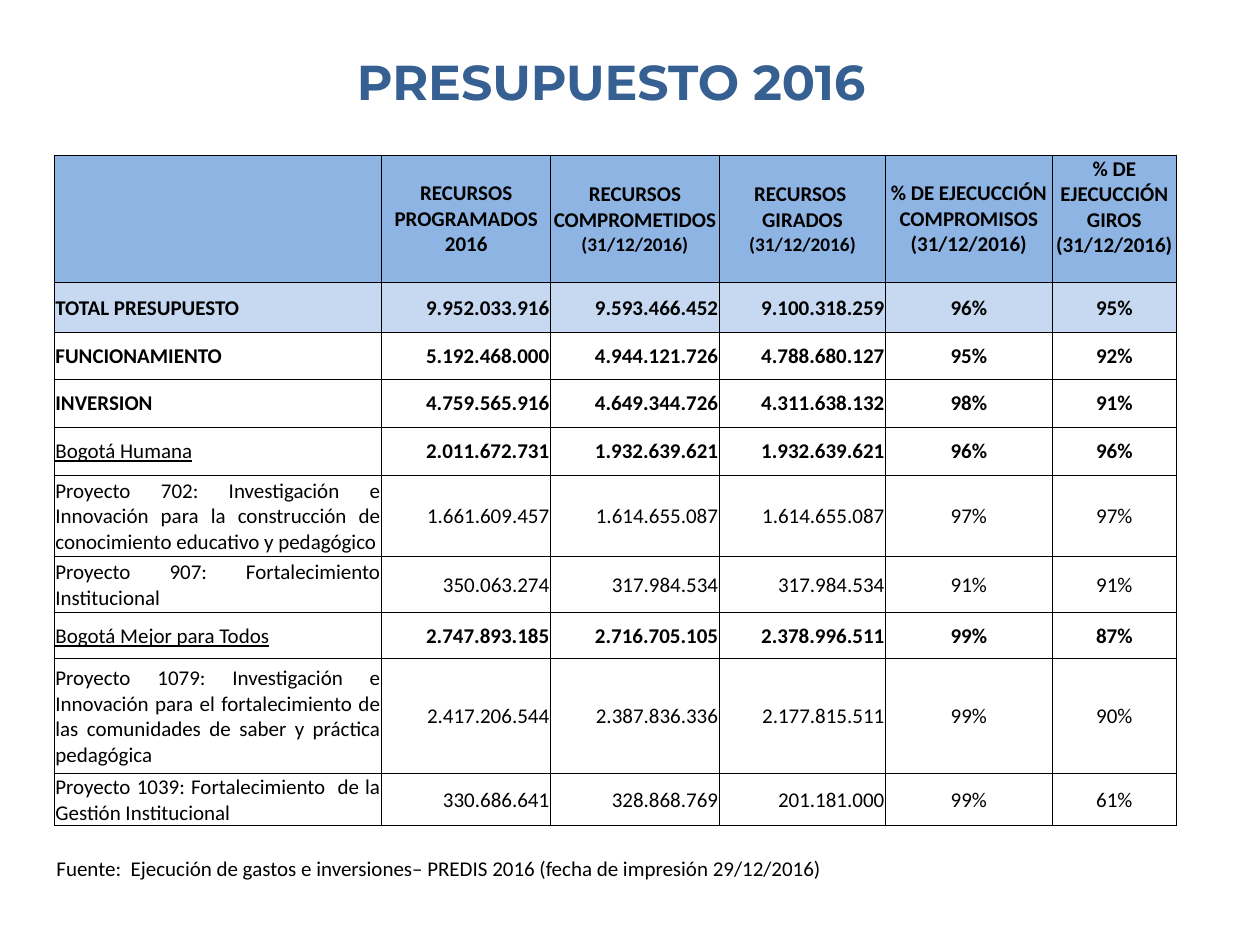
from pptx import Presentation
from pptx.dml.color import RGBColor
from pptx.enum.text import MSO_ANCHOR, MSO_AUTO_SIZE, PP_ALIGN
from pptx.oxml import parse_xml
from pptx.oxml.ns import nsdecls
from pptx.util import Inches, Pt

COLORS = {"title": "376092", "text": "000000", "border": "000000",
          "header": "8EB4E3", "total": "C6D9F1"}

COLUMN_WIDTHS = [2.6, 1.34, 1.34, 1.32, 1.32, 0.99]
ROW_HEIGHTS = [1.01, 0.4, 0.37, 0.38, 0.38, 0.65, 0.44, 0.37, 0.91, 0.41]
DATE = "(31/12/2016)"

HEADERS = [
    [],
    [("RECURSOS PROGRAMADOS", 12), ("2016", 12)],
    [("RECURSOS COMPROMETIDOS", 12), (DATE, 11)],
    [("RECURSOS ", 12), ("GIRADOS", 12), (DATE, 11)],
    [("% DE EJECUCCIÓN COMPROMISOS", 12), (DATE, 12)],
    [("% DE EJECUCCIÓN GIROS", 12), (DATE, 12)],
]

ROWS = [
    ("total", "TOTAL PRESUPUESTO", "9.952.033.916", "9.593.466.452", "9.100.318.259", "96%", "95%"),
    ("group", "FUNCIONAMIENTO", "5.192.468.000", "4.944.121.726", "4.788.680.127", "95%", "92%"),
    ("group", "INVERSION", "4.759.565.916", "4.649.344.726", "4.311.638.132", "98%", "91%"),
    ("plan", "Bogotá Humana", "2.011.672.731", "1.932.639.621", "1.932.639.621", "96%", "96%"),
    ("project", "Proyecto 702: Investigación e Innovación para la construcción de "
     "conocimiento educativo y pedagógico",
     "1.661.609.457", "1.614.655.087", "1.614.655.087", "97%", "97%"),
    ("project", "Proyecto 907: Fortalecimiento Institucional",
     "350.063.274", "317.984.534", "317.984.534", "91%", "91%"),
    ("plan", "Bogotá Mejor para Todos", "2.747.893.185", "2.716.705.105", "2.378.996.511", "99%", "87%"),
    ("project", "Proyecto 1079: Investigación e Innovación para el fortalecimiento de las "
     "comunidades de saber y práctica pedagógica",
     "2.417.206.544", "2.387.836.336", "2.177.815.511", "99%", "90%"),
    ("project", "Proyecto 1039: Fortalecimiento  de la Gestión Institucional",
     "330.686.641", "328.868.769", "201.181.000", "99%", "61%"),
]


class BudgetSlide:
    def __init__(self, page):
        self.page = page
        self.font = {"name": "Calibri", "size": Pt(12), "bold": False}
        self.margins = {"margin_left": Inches(0.01), "margin_right": Inches(0.01),
                        "margin_top": Inches(0.01), "margin_bottom": 0,
                        "vertical_anchor": MSO_ANCHOR.MIDDLE}

    def apply(self, target, values):
        for name, value in values.items():
            setattr(target, name, value)

    def add_span(self, para, text, align, color="text", **changes):
        para.alignment = align
        span = para.add_run()
        span.text = text
        self.apply(span.font, {**self.font, **changes})
        span.font.color.rgb = RGBColor.from_string(COLORS[color])

    def text(self, left, top, width, height, text, align, **changes):
        box = self.page.shapes.add_textbox(
            Inches(left), Inches(top), Inches(width), Inches(height))
        self.apply(box.text_frame, {"word_wrap": True,
                                    "auto_size": MSO_AUTO_SIZE.SHAPE_TO_FIT_TEXT})
        self.add_span(box.text_frame.paragraphs[0], text, align, **changes)

    def table(self, left, top, widths, heights):
        frame = self.page.shapes.add_table(
            len(heights), len(widths), Inches(left), Inches(top),
            Inches(sum(widths)), Inches(sum(heights)))
        grid = frame.table
        self.apply(grid, {"first_row": False, "horz_banding": False})
        for column, width in zip(grid.columns, widths):
            column.width = Inches(width)
        for row, height in zip(grid.rows, heights):
            row.height = Inches(height)
        return grid

    def cell(self, cell, lines, align, fill=None, **changes):
        self.apply(cell, self.margins)
        properties = cell._tc.get_or_add_tcPr()
        for side in ("lnL", "lnR", "lnT", "lnB"):
            properties.append(parse_xml(
                f'<a:{side} {nsdecls("a")} w="{Pt(0.5)}"><a:solidFill>'
                f'<a:srgbClr val="{COLORS["border"]}"/></a:solidFill></a:{side}>'))
        if fill:
            cell.fill.solid()
            cell.fill.fore_color.rgb = RGBColor.from_string(COLORS[fill])
        else:
            cell.fill.background()
        for index, (text, size) in enumerate(lines):
            frame = cell.text_frame
            para = frame.add_paragraph() if index else frame.paragraphs[0]
            self.add_span(para, text, align, size=Pt(size), **changes)


def main():
    deck = Presentation()
    deck.slide_width, deck.slide_height = Inches(10), Inches(7.5)
    slide = BudgetSlide(deck.slides.add_slide(deck.slide_layouts[6]))

    slide.text(2.4, 0.36, 4.9, 0.57, "PRESUPUESTO 2016", PP_ALIGN.CENTER,
               color="title", name="Montserrat", size=Pt(28), bold=True)
    slide.text(0.35, 6.74, 6.46, 0.3,
               "Fuente:  Ejecución de gastos e inversiones– PREDIS 2016 "
               "(fecha de impresión 29/12/2016)", PP_ALIGN.LEFT)

    grid = slide.table(0.43, 1.23, COLUMN_WIDTHS, ROW_HEIGHTS)
    for column, lines in enumerate(HEADERS):
        slide.cell(grid.cell(0, column), lines, PP_ALIGN.CENTER, "header", bold=True)
    grid.cell(0, len(HEADERS) - 1).margin_bottom = Inches(0.19)

    value_aligns = [PP_ALIGN.RIGHT] * 3 + [PP_ALIGN.CENTER] * 2
    for row, (kind, label, *values) in enumerate(ROWS, 1):
        fill = "total" if kind == "total" else None
        label_align = PP_ALIGN.JUSTIFY if kind == "project" else PP_ALIGN.LEFT
        slide.cell(grid.cell(row, 0), [(label, 12)], label_align, fill,
                   bold=kind in ("total", "group"), underline=kind == "plan")
        for column, (value, align) in enumerate(zip(values, value_aligns), 1):
            slide.cell(grid.cell(row, column), [(value, 12)], align, fill,
                       bold=kind != "project")

    deck.save("out.pptx")


if __name__ == "__main__":
    main()
